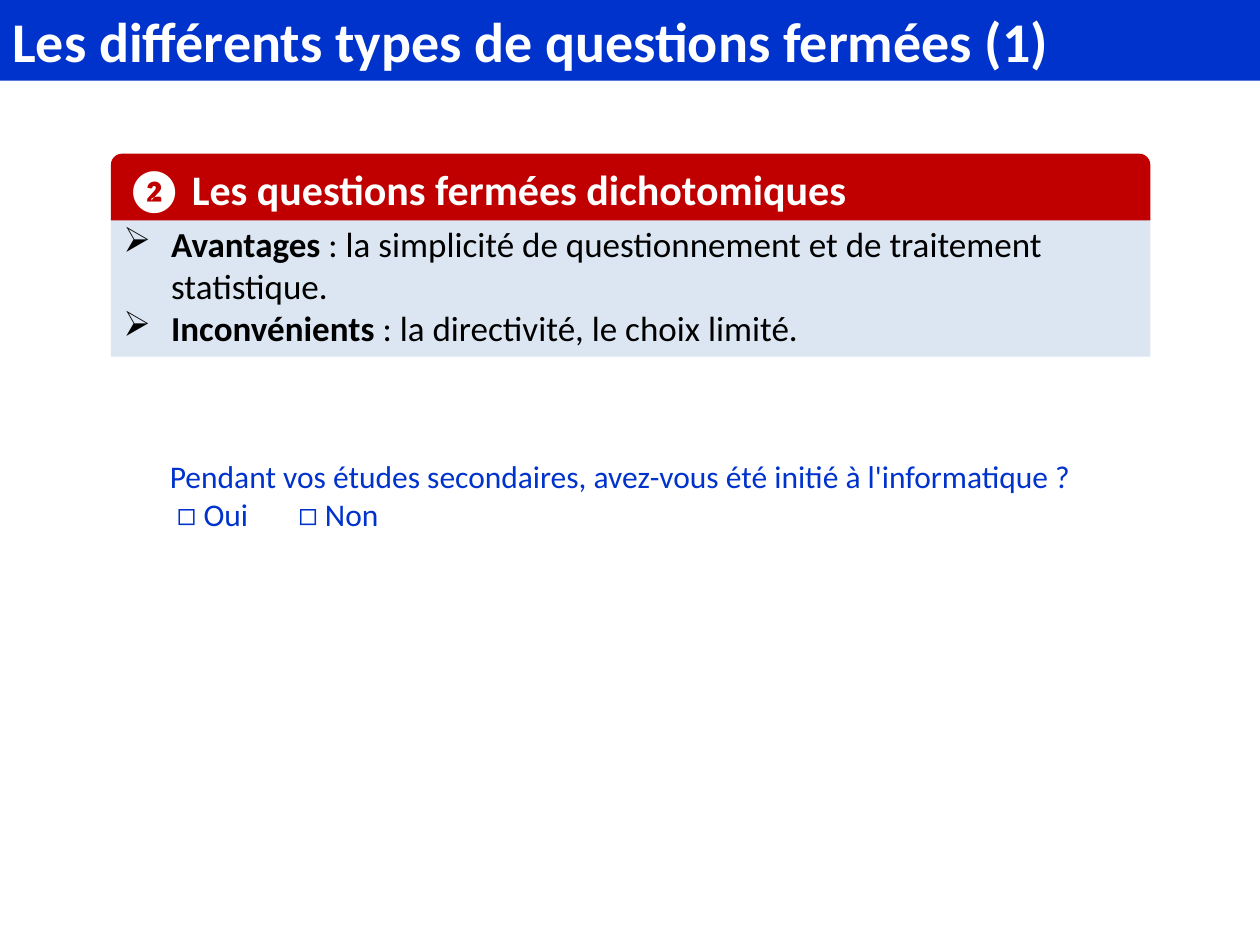
from lxml import etree
from pptx import Presentation
from pptx import util as u
from pptx.dml.color import RGBColor
from pptx.enum import shapes, text
from pptx.oxml.ns import qn

BLUE = RGBColor(0x00, 0x33, 0xCC)
RED = RGBColor(0xC0, 0x00, 0x00)
PALE_BLUE = RGBColor(0xDC, 0xE6, 0xF2)
WHITE = RGBColor(0xFF, 0xFF, 0xFF)
BLACK = RGBColor(0x00, 0x00, 0x00)

HEADER_HEIGHT = 0.53
BODY_OFFSET = 0.5
BULLET_INDENT = 0.38
SECOND_CHOICE_TAB = 1.02


def write(frame, paragraphs, size, color):
    settings = {
        "word_wrap": True,
        "auto_size": text.MSO_AUTO_SIZE.SHAPE_TO_FIT_TEXT,
        "vertical_anchor": text.MSO_ANCHOR.TOP,
    }
    for name, value in settings.items():
        setattr(frame, name, value)
    for index, pieces in enumerate(paragraphs):
        paragraph = frame.add_paragraph() if index else frame.paragraphs[0]
        paragraph.alignment = text.PP_ALIGN.LEFT
        for words, bold in pieces:
            run = paragraph.add_run()
            run.text = words
            style = {"name": "Calibri", "size": u.Pt(size), "bold": bold}
            for name, value in style.items():
                setattr(run.font, name, value)
            run.font.color.rgb = color


def add_panel(slide, preset, box, fill, paragraphs, size, color):
    panel = slide.shapes.add_shape(preset, *map(u.Inches, box))
    panel.shadow.inherit = False
    panel.fill.solid()
    panel.fill.fore_color.rgb = fill
    panel.line.fill.background()
    write(panel.text_frame, paragraphs, size, color)
    return panel


def add_title(slide, box, title):
    add_panel(slide, shapes.MSO_SHAPE.RECTANGLE, box, BLUE, [[(title, True)]], 32, WHITE)


def add_card(slide, box, heading, points):
    left, top, width, height = box
    body_box = (left, top + BODY_OFFSET, width, height - BODY_OFFSET)
    paragraphs = [[(label, True), (detail, False)] for label, detail in points]
    body = add_panel(slide, shapes.MSO_SHAPE.RECTANGLE, body_box, PALE_BLUE, paragraphs, 20, BLACK)
    indent = u.Inches(BULLET_INDENT)
    for paragraph in body.text_frame.paragraphs:
        properties = paragraph._p.get_or_add_pPr()
        properties.set("marL", str(indent))
        properties.set("indent", str(-indent))
        etree.SubElement(properties, qn("a:buChar"), char="➢")
    header_box = (left, top, width, HEADER_HEIGHT)
    add_panel(slide, shapes.MSO_SHAPE.ROUND_2_SAME_RECTANGLE, header_box, RED,
              [[(heading, True)]], 24, WHITE)


def add_question(slide, box, question, choices):
    example = slide.shapes.add_textbox(*map(u.Inches, box))
    answers = " " + "\t".join(f"◻ {choice}" for choice in choices)
    write(example.text_frame, [[(question, False)], [(answers, False)]], 18, BLUE)
    properties = example.text_frame.paragraphs[1]._p.get_or_add_pPr()
    tabs = etree.SubElement(properties, qn("a:tabLst"))
    etree.SubElement(tabs, qn("a:tab"), pos=str(u.Inches(SECOND_CHOICE_TAB)), algn="l")


def main():
    deck = Presentation()
    deck.slide_width, deck.slide_height = u.Inches(10), u.Inches(7.5)
    slide = deck.slides.add_slide(deck.slide_layouts[6])
    add_title(slide, (0, 0, 10, 0.64), "Les différents types de questions fermées (1)")
    add_card(slide, (0.88, 1.22, 8.25, 1.61), "❷ Les questions fermées dichotomiques", [
        ("Avantages", " : la simplicité de questionnement et de traitement statistique."),
        ("Inconvénients", " : la directivité, le choix limité."),
    ])
    add_question(slide, (1.25, 3.58, 7.5, 0.71),
                 "Pendant vos études secondaires, avez-vous été initié à l'informatique ?",
                 ["Oui", "Non"])
    deck.save("out.pptx")


if __name__ == "__main__":
    main()
